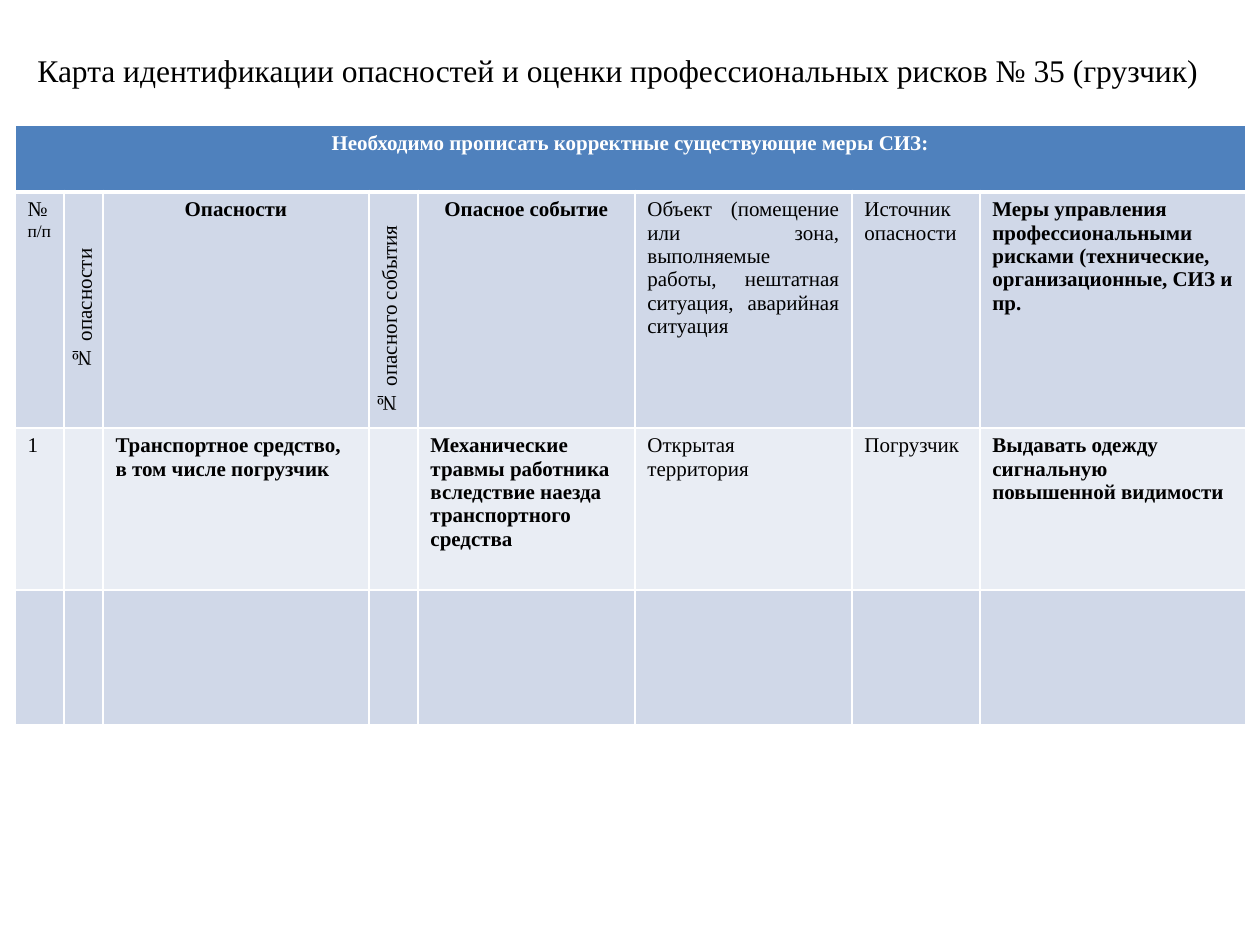
from lxml import etree
from pptx import Presentation
from pptx import util as u
from pptx.dml import color
from pptx.enum import text
from pptx.oxml import ns

PX = 914400 // 126
ALIGN = {"l": text.PP_ALIGN.LEFT, "c": text.PP_ALIGN.CENTER, "j": text.PP_ALIGN.JUSTIFY}


def paint(fill, hex_color):
    fill.solid()
    fill.fore_color.rgb = color.RGBColor.from_string(hex_color)


def write(paragraph, words, size=12, bold=False, ink="000000", align="l"):
    paragraph.alignment = ALIGN[align]
    run = paragraph.add_run()
    run.text = words
    run.font.name = "Times New Roman"
    run.font.size = u.Pt(size)
    run.font.bold = bold
    paint(run.font.fill, ink)


deck = Presentation()
deck.slide_width, deck.slide_height = 1260 * PX, 945 * PX
slide = deck.slides.add_slide(deck.slide_layouts[6])

columns = [49, 39, 266, 49, 217, 217, 128, 266]
rows = [67, 236, 162, 135]
risk_map = slide.shapes.add_table(
    len(rows), len(columns), 15 * PX, 125 * PX, sum(columns) * PX, sum(rows) * PX
).table
for column, width in zip(risk_map.columns, columns):
    column.width = width * PX
for row, height in zip(risk_map.rows, rows):
    row.height = height * PX

row_fills = ["4F81BD", "D0D8E8", "E9EDF4", "D0D8E8"]
for r, row_fill in enumerate(row_fills):
    for c in range(len(columns)):
        cell = risk_map.cell(r, c)
        props = cell._tc.get_or_add_tcPr()
        for side in "LRTB":
            thick = (r, side) in [(0, "B"), (1, "T")]
            border = etree.SubElement(props, ns.qn(f"a:ln{side}"), w=str(u.Pt(3 if thick else 1)))
            border_fill = etree.SubElement(border, ns.qn("a:solidFill"))
            etree.SubElement(border_fill, ns.qn("a:srgbClr"), val="FFFFFF")
        paint(cell.fill, row_fill)

risk_map.cell(0, 0).merge(risk_map.cell(0, len(columns) - 1))
write(risk_map.cell(0, 0).text_frame.paragraphs[0],
      "Необходимо прописать корректные существующие меры СИЗ:",
      bold=True, ink="FFFFFF", align="c")

headings = ["№", "№ опасности", "Опасности", "№ опасного события", "Опасное событие",
            "Объект (помещение или зона, выполняемые работы, нештатная ситуация, аварийная ситуация",
            "Источник опасности",
            "Меры управления профессиональными рисками (технические, организационные, СИЗ и пр."]
hazard = ["1", "", "Транспортное средство, в том числе погрузчик", "",
          "Механические травмы работника вследствие наезда транспортного средства",
          "Открытая территория", "Погрузчик",
          "Выдавать одежду сигнальную повышенной видимости"]
bold_columns = (2, 4, 7)
for c, (heading, entry, align) in enumerate(zip(headings, hazard, "lcclcjll")):
    bold = c in bold_columns
    write(risk_map.cell(1, c).text_frame.paragraphs[0], heading, bold=bold, align=align)
    if entry:
        write(risk_map.cell(2, c).text_frame.paragraphs[0], entry, bold=bold)

write(risk_map.cell(1, 0).text_frame.add_paragraph(), "п/п", size=10)
for c in (1, 3):
    risk_map.cell(1, c)._tc.get_or_add_tcPr().set("vert", "vert270")

title = slide.shapes.add_textbox(25 * PX, 45 * PX, 1191 * PX, 51 * PX).text_frame
title.word_wrap = True
title.auto_size = text.MSO_AUTO_SIZE.SHAPE_TO_FIT_TEXT
write(title.paragraphs[0],
      "Карта идентификации опасностей и оценки профессиональных рисков № 35 (грузчик)", size=18)

deck.save("out.pptx")
